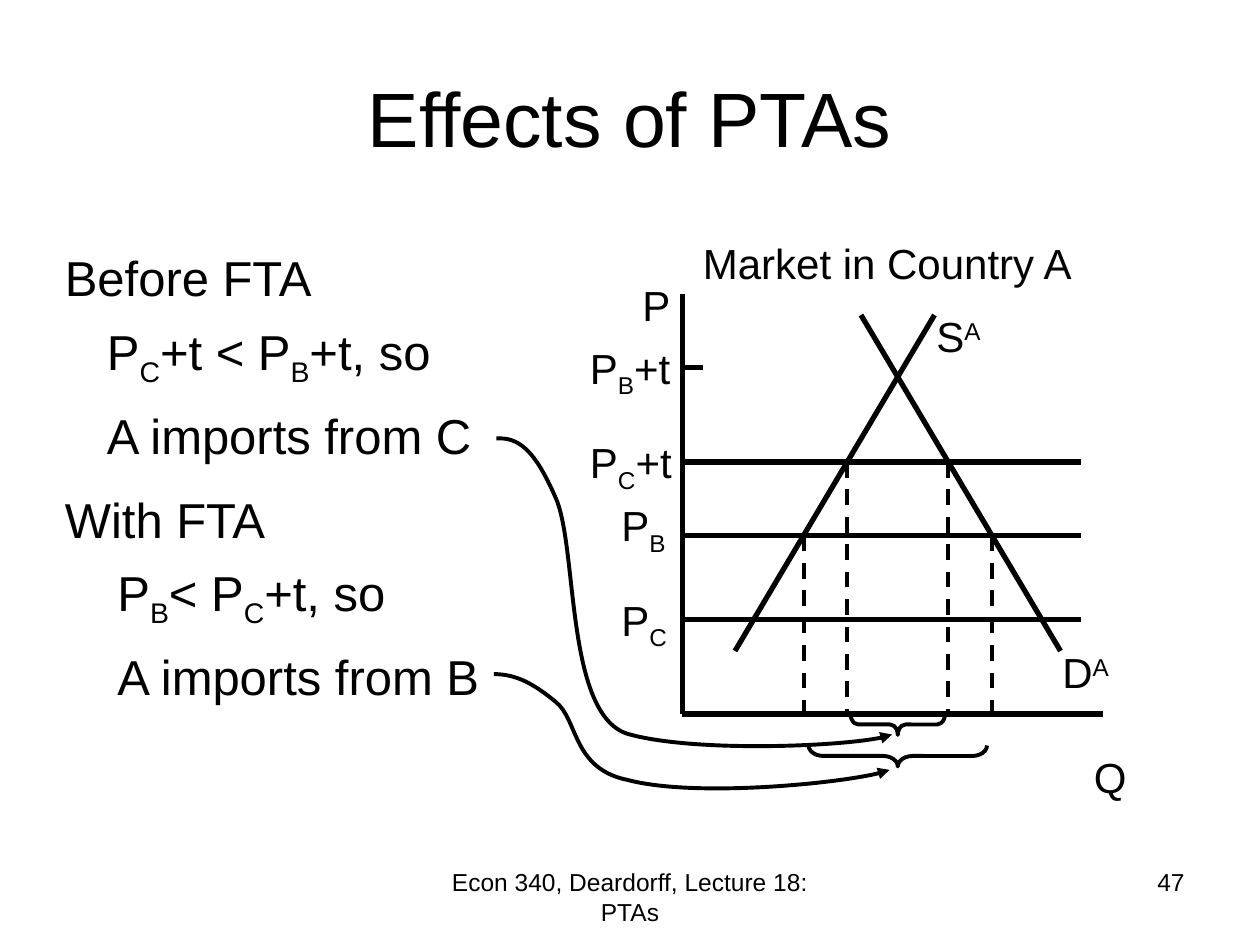
from lxml.etree import SubElement
from pptx import Presentation
from pptx.dml.color import RGBColor
from pptx.enum.dml import MSO_LINE
from pptx.enum.shapes import MSO_CONNECTOR, MSO_SHAPE
from pptx.enum.text import MSO_ANCHOR, PP_ALIGN as Align
from pptx.oxml.ns import qn
from pptx.util import Inches, Pt

COLORS = {"ink": "000000"}
FONT = "Arial"
COLUMNS, ROWS = 120, 90
UNIT = Inches(10) / COLUMNS
SCRIPTS = {"_": "-25000", "^": "30000"}


def grid(count):
    return round(count * UNIT)


def ink():
    return RGBColor.from_string(COLORS["ink"])


def write(para, text, size, align=Align.LEFT):
    """Set text in which _x_ is a subscript and ^x^ a superscript."""
    mark = "^" if "^" in text else "_"
    para.alignment = align
    for index, part in enumerate(text.split(mark)):
        span = para.add_run()
        span.text = part
        span.font.size, span.font.name = Pt(size), FONT
        span.font.color.rgb = ink()
        if index % 2:
            span.font._element.set("baseline", SCRIPTS[mark])


def add_text(page, text, left, top, width, height, size, align=Align.LEFT):
    box = page.shapes.add_textbox(*map(grid, (left, top, width, height)))
    box.text_frame.word_wrap = True
    write(box.text_frame.paragraphs[0], text, size, align)


def style_line(shape, weight):
    shape.line.color.rgb = ink()
    shape.line.width = Pt(weight)


def add_line(page, start, end, weight=3, dashed=False):
    line = page.shapes.add_connector(MSO_CONNECTOR.STRAIGHT, *map(grid, start + end))
    style_line(line, weight)
    if dashed:
        line.line.dash_style = MSO_LINE.DASH
    SubElement(line._element.spPr, qn("a:effectLst"))


def add_brace(page, center, top, span, depth=2):
    """Add a brace that opens upwards and spans the given columns."""
    brace = page.shapes.add_shape(
        MSO_SHAPE.RIGHT_BRACE, grid(center - depth / 2), grid(top + depth / 2 - span / 2),
        grid(depth), grid(span))
    brace.rotation = 90
    brace.adjustments[0] = span / depth / 12
    brace.fill.background()
    brace.shadow.inherit = False
    style_line(brace, 2.25)


def add_curved_arrow(page, points):
    """Add an arrow along Bezier curves: a start, then three points a curve."""
    start, *controls = [(Inches(x), Inches(y)) for x, y in points]
    builder = page.shapes.build_freeform(*start)
    builder.add_line_segments(controls, close=False)
    arrow = builder.convert_to_shape()
    arrow.fill.background()
    arrow.shadow.inherit = False
    style_line(arrow, 2.25)
    SubElement(arrow.line._get_or_add_ln(), qn("a:tailEnd"), type="triangle")
    segments = list(arrow._element.iter(qn("a:lnTo")))
    for first in range(0, len(segments), 3):
        curve = SubElement(segments[first].getparent(), qn("a:cubicBezTo"))
        for segment in segments[first:first + 3]:
            curve.append(segment[0])
            segment.getparent().remove(segment)


def add_title(page, text):
    title = page.shapes.title
    title.text_frame.vertical_anchor = MSO_ANCHOR.MIDDLE
    write(title.text_frame.paragraphs[0], text, 44, Align.CENTER)


def add_cases(page, left, top):
    cases = [
        ("Before FTA", 0, 0), ("P_C_+t < P_B_+t, so", 4, 7), ("A imports from C", 4, 15),
        ("With FTA", 0, 23), ("P_B_< P_C_+t, so", 5, 30), ("A imports from B", 5, 38),
    ]
    for text, indent, row in cases:
        add_text(page, text, left + indent, top + row, 39, 7, 28)


def add_market(page, left, top, side):
    """Draw the supply and demand diagram on a square of grid units."""
    def at(column, row):
        return left + column, top + row

    curve_top, curve_bottom, curve_run = 2, 34, 19
    supply_start, demand_start = 24, 17
    center = (supply_start + demand_start) / 2
    tariff_c, price_b, price_c = 16, 23, 31

    add_line(page, at(0, 0), at(0, side))
    add_line(page, at(0, side), at(side, side))
    for start, run in ((supply_start, -curve_run), (demand_start, curve_run)):
        add_line(page, at(start, curve_top), at(start + run, curve_bottom))
    for row in (tariff_c, price_b, price_c):
        add_line(page, at(0, row), at(side - 2, row))
    for row in (7, tariff_c, price_b):
        add_line(page, at(0, row), at(2, row))

    for row in (tariff_c, price_b):
        run = curve_run * (row - curve_top) / (curve_bottom - curve_top)
        for column in (supply_start - run, demand_start + run):
            add_line(page, at(column, row), at(column, side), 2.25, dashed=True)
    for row, span in ((side, 9), (side + 3, 17)):
        add_brace(page, left + center, top + row, span)

    labels = [
        ("P", -5, -2), ("P_B_+t", -10, 4), ("P_C_+t", -10, 13), ("P_B_", -7, 19),
        ("P_C_", -7, 28), ("S^A^", 23, 1), ("D^A^", 35, 33), ("Q", 38, 43),
    ]
    for text, column, row in labels:
        add_text(page, text, *at(column, row), 12, 6, 24)
    add_text(page, "Market in Country A", *at(0, -6), 39, 6, 24, Align.CENTER)


def add_import_arrows(page):
    add_curved_arrow(page, [
        (3.94, 3.48), (4.11, 3.47), (4.24, 3.56), (4.41, 3.95), (4.59, 4.35),
        (4.48, 5.7), (5, 5.83), (5.52, 5.97), (6.89, 5.92), (7.08, 5.83)])
    add_curved_arrow(page, [
        (3.92, 5.35), (4.1, 5.35), (4.24, 5.43), (4.41, 5.57), (4.59, 5.71),
        (4.54, 6.1), (4.98, 6.19), (5.51, 6.33), (6.87, 6.2), (7.06, 6.11)])


def add_footer(page, top):
    add_text(page, "Econ 340, Deardorff, Lecture 18: PTAs", 41, top, 38, 6.25, 14, Align.CENTER)
    add_text(page, "47", 86, top, 28, 6.25, 14, Align.RIGHT)


def main():
    deck = Presentation()
    deck.slide_width, deck.slide_height = grid(COLUMNS), grid(ROWS)
    page = deck.slides.add_slide(deck.slide_layouts[5])
    add_title(page, "Effects of PTAs")
    add_cases(page, left=5, top=23)
    add_market(page, left=65, top=28, side=40)
    add_import_arrows(page)
    add_footer(page, top=82)
    deck.save("out.pptx")


if __name__ == "__main__":
    main()
